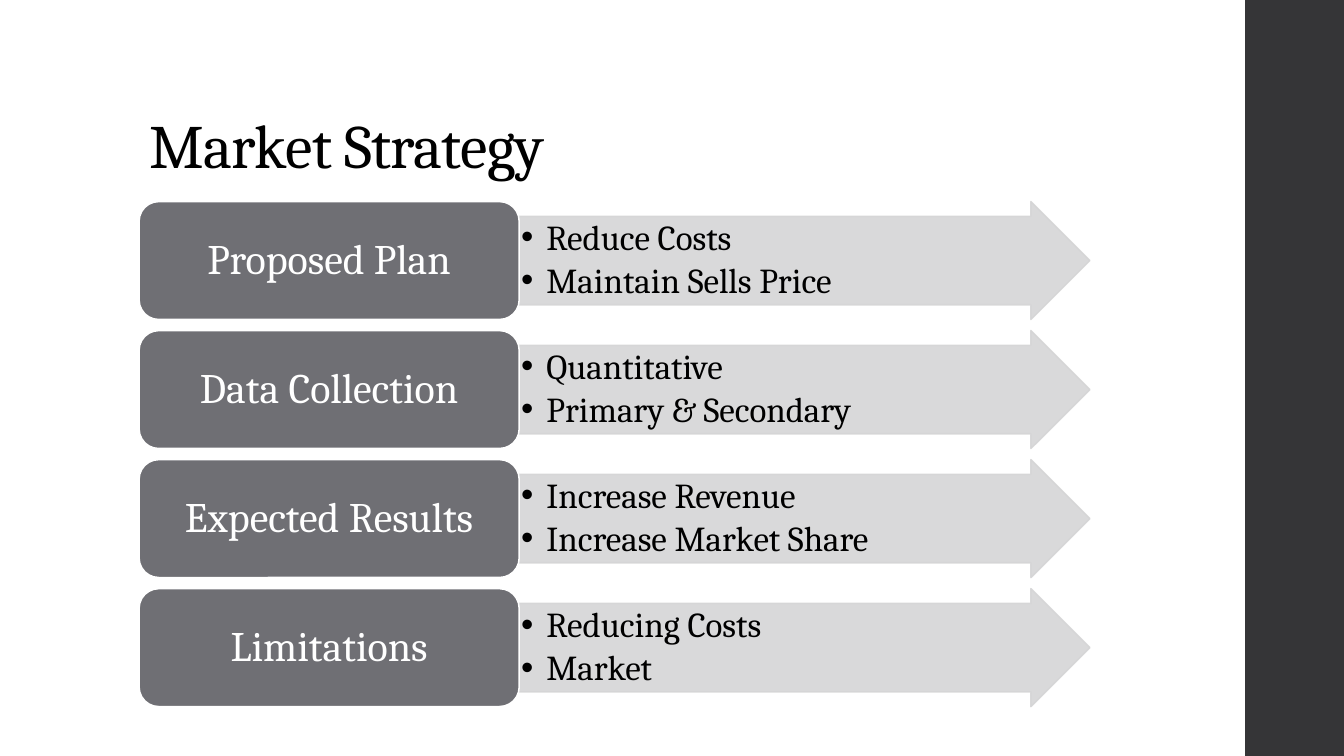
from lxml import etree
from pptx import Presentation
from pptx.dml.color import RGBColor
from pptx.enum import shapes, text
from pptx.oxml import ns
from pptx.util import Inches, Pt


class Theme:
    """Colours, font and type sizes."""
    font = "Cambria"
    ink = RGBColor(0x00, 0x00, 0x00)
    white = RGBColor(0xFF, 0xFF, 0xFF)
    band = RGBColor(0x35, 0x35, 0x37)
    label = RGBColor(0x6F, 0x6F, 0x74)
    arrow = RGBColor(0xD5, 0xD5, 0xD6)
    title_size, label_size, list_size = 44, 30, 25
    edge = 1.1


def add_tag(parent, tag, **attrs):
    return etree.SubElement(parent, ns.qn(tag), attrs)


class Deck:
    def __init__(self, theme):
        self.theme = theme
        self.prs = Presentation()
        self.prs.slide_width = Inches(13.33)
        self.prs.slide_height = Inches(7.5)
        self.slide = self.prs.slides.add_slide(self.prs.slide_layouts[5])

    def shape(self, kind, box, fill, line=None):
        item = self.slide.shapes.add_shape(kind, *map(Inches, box))
        item.shadow.inherit = False
        item.fill.solid()
        item.fill.fore_color.rgb = fill
        if line is None:
            item.line.fill.background()
        else:
            item.line.color.rgb = line
            item.line.width = Pt(self.theme.edge)
        return item

    def frame(self, item, insets, anchor):
        frame = item.text_frame
        frame.word_wrap = True
        frame.auto_size = text.MSO_AUTO_SIZE.NONE
        frame.vertical_anchor = anchor
        frame.margin_left = frame.margin_right = Inches(insets[0])
        frame.margin_top = frame.margin_bottom = Inches(insets[1])
        return frame

    def put_run(self, para, words, size, color, align, after=0):
        para.alignment = align
        para.line_spacing = 0.9
        para.space_before = para.space_after = Pt(0)
        if after:
            # Space after as a percentage of the line
            gap = para._p.pPr.find(ns.qn("a:spcAft"))
            gap.remove(gap[0])
            add_tag(gap, "a:spcPct", val=str(after * 1000))
        run = para.add_run()
        run.text = words
        run.font.name = self.theme.font
        run.font.size = Pt(size)
        run.font.color.rgb = color
        return run

    def title(self, words, box):
        item = self.slide.shapes.title
        item.left, item.top, item.width, item.height = map(Inches, box)
        frame = self.frame(item, (0.1, 0.05), text.MSO_ANCHOR.BOTTOM)
        run = self.put_run(frame.paragraphs[0], words, self.theme.title_size,
                           self.theme.ink, text.PP_ALIGN.LEFT)
        run.font._element.set("spc", "-50")

    def band(self, box):
        self.shape(shapes.MSO_SHAPE.RECTANGLE, box, self.theme.band)

    def arrow(self, lines, box):
        tone = self.theme.arrow
        item = self.shape(shapes.MSO_SHAPE.RIGHT_ARROW, box, tone, tone)
        item.adjustments[0], item.adjustments[1] = 0.75, 0.5
        for color in item._element.spPr.iter(ns.qn("a:srgbClr")):
            add_tag(color, "a:alpha", val="90000")
        frame = self.frame(item, (0.02, 0.02), text.MSO_ANCHOR.MIDDLE)
        for n, words in enumerate(lines):
            para = frame.add_paragraph() if n else frame.paragraphs[0]
            self.put_run(para, words, self.theme.list_size, self.theme.ink,
                         text.PP_ALIGN.LEFT, after=15)
            props = para._p.pPr
            props.set("marL", str(Inches(0.25)))
            props.set("indent", str(-Inches(0.25)))
            add_tag(props, "a:buFont", typeface="Arial")
            add_tag(props, "a:buChar", char="•")

    def label(self, words, box):
        item = self.shape(shapes.MSO_SHAPE.ROUNDED_RECTANGLE, box,
                          self.theme.label, self.theme.white)
        frame = self.frame(item, (0.12, 0.06), text.MSO_ANCHOR.MIDDLE)
        self.put_run(frame.paragraphs[0], words, self.theme.label_size,
                     self.theme.white, text.PP_ALIGN.CENTER, after=35)


ROWS = [
    ("Proposed Plan", ["Reduce Costs", "Maintain Sells Price"]),
    ("Data Collection", ["Quantitative", "Primary & Secondary"]),
    ("Expected Results", ["Increase Revenue", "Increase Market Share"]),
    ("Limitations", ["Reducing Costs", "Market"]),
]
LEFT, TOP, STEP, HIGH = 1.38, 2, 1.28, 1.17
LABEL_WIDE, ARROW_WIDE = 3.77, 5.66


def main():
    deck = Deck(Theme)

    # Side band and title
    deck.band((12.35, 0, 0.98, 7.5))
    deck.title("Market Strategy", (LEFT, 0.4, 10.6, 1.45))

    # One label and arrow per row
    for n, (name, lines) in enumerate(ROWS):
        top = TOP + n * STEP
        deck.arrow(lines, (LEFT + LABEL_WIDE, top, ARROW_WIDE, HIGH))
        deck.label(name, (LEFT, top, LABEL_WIDE, HIGH))

    deck.prs.save("out.pptx")


if __name__ == "__main__":
    main()
